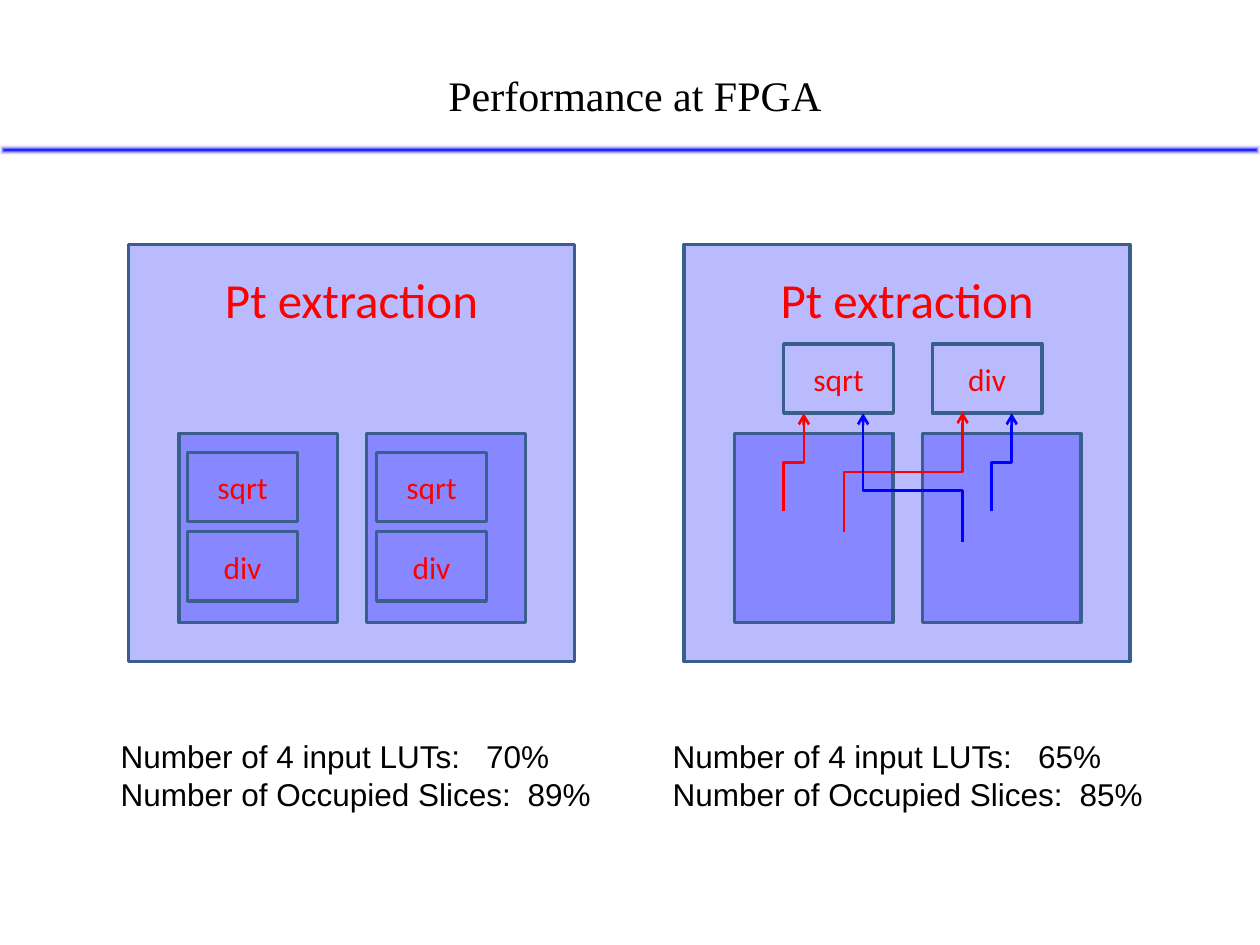
from lxml import etree
from pptx import Presentation
from pptx.dml.color import RGBColor
from pptx.enum.shapes import MSO_CONNECTOR, MSO_SHAPE
from pptx.enum.text import MSO_ANCHOR, PP_ALIGN
from pptx.oxml import parse_xml
from pptx.oxml.ns import nsdecls, qn
from pptx.util import Inches, Pt

RECT, ELBOW = MSO_SHAPE.RECTANGLE, MSO_CONNECTOR.ELBOW
LEFT, CENTER = PP_ALIGN.LEFT, PP_ALIGN.CENTER
TOP, MIDDLE = MSO_ANCHOR.TOP, MSO_ANCHOR.MIDDLE

THEME = {
    "blue": "0000FF", "red": "FF0000", "black": "000000", "white": "FFFFFF",
    "border": "3A5F8C", "tint": 27,
    "block_font": "Calibri", "body_font": "Arial", "title_font": "Times New Roman",
    "block_size": 28, "title_size": 24, "body_size": 18,
    "border_width": 2, "arrow_width": 1.5,
}

# Content
TITLE = "Performance at FPGA"
BLOCK_LABEL = "Pt extraction"
LABELS = ("Number of 4 input LUTs:", "Number of Occupied Slices:")
VALUE_TABS = (2.9, 3.23)
# Units are (label, x, y) relative to their block
DESIGNS = [
    {"x": 1.02, "usage_x": 0.86, "usage": ("70%", "89%"),
     "units": [(label, x, y) for x in (0.47, 1.97)
               for label, y in (("sqrt", 1.65), ("div", 2.28))]},
    {"x": 5.43, "usage_x": 5.24, "usage": ("65%", "85%"),
     "units": [("sqrt", 0.79, 0.79), ("div", 1.97, 0.79)]},
]
# Requests to the shared units: start, end, colour, bend position
REQUESTS = [
    ((6.22, 4.06), (6.38, 3.28), "red", 0.5),
    ((7.87, 4.06), (8.03, 3.28), "blue", 0.5),
    ((6.70, 4.22), (7.64, 3.27), "red", 0.5),
    ((7.64, 4.30), (6.85, 3.28), "blue", 0.4),
]

# Layout
BLOCK_Y, BLOCK_W, BLOCK_H = 1.94, 3.54, 3.31
CORE_W, CORE_H, CORE_DY = 1.26, 1.5, 1.5
CORE_DX = (0.4, 1.89)
UNIT_W, UNIT_H = 0.87, 0.55

prs = Presentation()
prs.slide_width, prs.slide_height = Inches(10), Inches(7.5)
slide = prs.slides.add_slide(prs.slide_layouts[6])
shapes = slide.shapes


def color(name):
    return RGBColor.from_string(THEME[name])


def write(shape, lines, *, font, size, ink, align=LEFT, anchor=TOP, wrap=True, tabs=()):
    frame = shape.text_frame
    frame.word_wrap = wrap
    frame.vertical_anchor = anchor
    for i, line in enumerate(lines):
        para = frame.paragraphs[0] if i == 0 else frame.add_paragraph()
        para.alignment = align
        run = para.add_run()
        run.text = line
        run.font.name = THEME[font]
        run.font.size = Pt(THEME[size])
        run.font.color.rgb = color(ink)
        if tabs:
            stops = etree.SubElement(para._p.get_or_add_pPr(), qn("a:tabLst"))
            etree.SubElement(stops, qn("a:tab"), pos=str(Inches(tabs[i])), algn="l")
    return frame


def text_box(x, y, w, h, lines, **fmt):
    box = shapes.add_textbox(Inches(x), Inches(y), Inches(w), Inches(h))
    write(box, lines, wrap=False, **fmt)


def box(x, y, w, h, tinted=False):
    shape = shapes.add_shape(RECT, Inches(x), Inches(y), Inches(w), Inches(h))
    shape.shadow.inherit = False
    shape.line.color.rgb = color("border")
    shape.line.width = Pt(THEME["border_width"])
    if tinted:
        shape.fill.solid()
        shape.fill.fore_color.rgb = color("blue")
        rgb = shape._element.spPr.find(qn("a:solidFill"))[0]
        etree.SubElement(rgb, qn("a:alpha"), val=str(THEME["tint"] * 1000))
    else:
        shape.fill.background()
    return shape


def request_arrow(start, end, ink, bend):
    """Elbow that leaves and arrives vertically: a horizontal one, turned."""
    (x1, y1), (x2, y2) = start, end
    cx, cy = (x1 + x2) / 2, (y1 + y2) / 2
    side = 1 if x2 > x1 else -1
    dx, dy = side * (y1 - y2) / 2, abs(x2 - x1) / 2
    arrow = shapes.add_connector(ELBOW, Inches(cx + dx), Inches(cy + dy),
                                 Inches(cx - dx), Inches(cy - dy))
    arrow.line.color.rgb = color(ink)
    arrow.line.width = Pt(THEME["arrow_width"])
    props = arrow._element.spPr
    props.find(qn("a:xfrm")).set("rot", str((90 if side > 0 else 270) * 60000))
    guides = props.find(qn("a:prstGeom")).find(qn("a:avLst"))
    etree.SubElement(guides, qn("a:gd"), name="adj1", fmla=f"val {round(bend * 100000)}")
    etree.SubElement(props.find(qn("a:ln")), qn("a:tailEnd"), type="arrow")
    etree.SubElement(props, qn("a:effectLst"))


# Designs: block, cores, arithmetic units
for design in DESIGNS:
    left = design["x"]
    block = box(left, BLOCK_Y, BLOCK_W, BLOCK_H, tinted=True)
    frame = write(block, [BLOCK_LABEL], font="block_font", size="block_size",
                  ink="red", align=CENTER)
    frame.margin_top = Inches(0.2)
    for dx in CORE_DX:
        box(left + dx, BLOCK_Y + CORE_DY, CORE_W, CORE_H, tinted=True)
    for label, dx, dy in design["units"]:
        write(box(left + dx, BLOCK_Y + dy, UNIT_W, UNIT_H), [label], font="block_font",
              size="body_size", ink="red", align=CENTER, anchor=MIDDLE)

# Shared-unit requests
for request in REQUESTS:
    request_arrow(*request)

# Resource usage
for design in DESIGNS:
    usage = [f"{label}\t{value}" for label, value in zip(LABELS, design["usage"])]
    text_box(design["usage_x"], 5.8, 4.06, 0.71, usage, font="body_font",
             size="body_size", ink="black", tabs=VALUE_TABS)

# Title and its glowing rule
rule = box(0, 1.15, 10, 0.08)
rule.line.fill.background()
rule_props = rule._element.spPr
rule_props.replace(rule_props.find(qn("a:noFill")), parse_xml(
    f'<a:gradFill {nsdecls("a")} rotWithShape="1"><a:gsLst>'
    f'<a:gs pos="0"><a:srgbClr val="{THEME["blue"]}"/></a:gs>'
    f'<a:gs pos="100000"><a:srgbClr val="{THEME["white"]}"><a:alpha val="0"/></a:srgbClr></a:gs>'
    '</a:gsLst><a:path path="shape">'
    '<a:fillToRect l="50000" t="50000" r="50000" b="50000"/></a:path></a:gradFill>'))
text_box(3.46, 0.5, 3.19, 0.5, [TITLE], font="title_font", size="title_size", ink="black")

prs.save("out.pptx")
